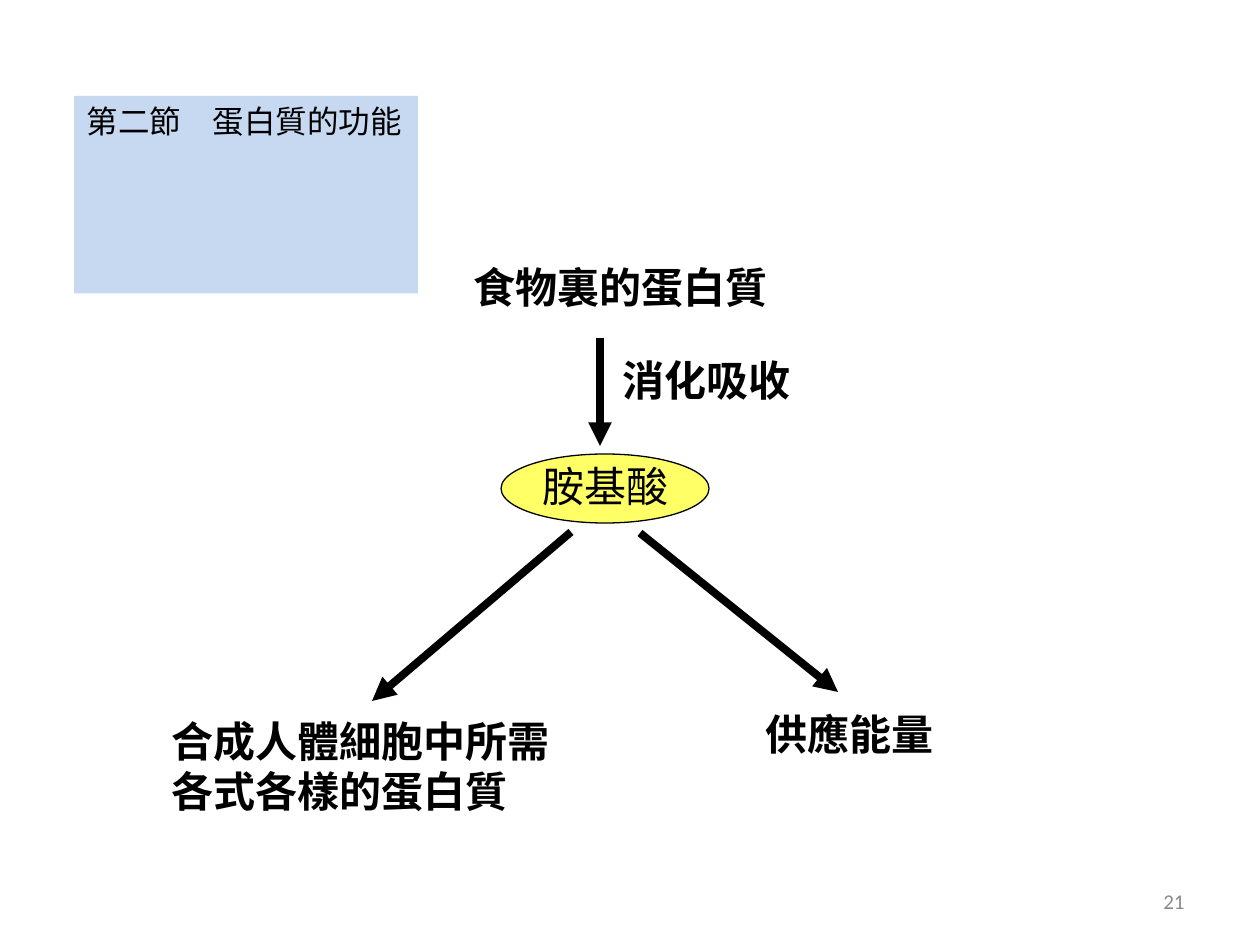
from lxml import etree
from pptx import Presentation
from pptx import util as u
from pptx.dml.color import RGBColor
from pptx.enum import shapes, text
from pptx.oxml import ns

BLACK = RGBColor(0x00, 0x00, 0x00)
GREY = RGBColor(0x89, 0x89, 0x89)
YELLOW = RGBColor(0xFF, 0xFF, 0x66)
PALE_BLUE = RGBColor(0xC6, 0xD9, 0xF1)

PX_PER_INCH = 126
TITLE_ONLY = 5


def px(*lengths):
    return [u.Emu(round(n * u.Inches(1) / PX_PER_INCH)) for n in lengths]


class Diagram:
    """The current slide and the style shared by its elements."""
    body_font = "Times New Roman"
    title_font = "Noto Sans CJK SC"
    number_font = "Calibri"
    body_size = 24

    def __init__(self, slide):
        self.slide = slide

    def set_words(self, frame, words, font, size, color=BLACK, bold=False,
                  align=text.PP_ALIGN.LEFT, anchor=text.MSO_ANCHOR.MIDDLE,
                  wrap=False, grow=True):
        frame.word_wrap = wrap
        frame.auto_size = (text.MSO_AUTO_SIZE.SHAPE_TO_FIT_TEXT if grow
                           else text.MSO_AUTO_SIZE.NONE)
        frame.vertical_anchor = anchor
        paragraph = frame.paragraphs[0]
        paragraph.alignment = align
        run = paragraph.add_run()
        run.text = words
        run.font.name = font
        run.font.size = u.Pt(size)
        run.font.bold = bold
        run.font.color.rgb = color

    def title(self, words, box):
        heading = self.slide.shapes.title
        heading.left, heading.top, heading.width, heading.height = px(*box)
        heading.fill.solid()
        heading.fill.fore_color.rgb = PALE_BLUE
        self.set_words(heading.text_frame, words, self.title_font, 18,
                       anchor=text.MSO_ANCHOR.TOP)

    def label(self, words, box, bold=True, wrap=False):
        frame = self.slide.shapes.add_textbox(*px(*box)).text_frame
        self.set_words(frame, words, self.body_font, self.body_size,
                       bold=bold, wrap=wrap)

    def page_number(self, words, box):
        frame = self.slide.shapes.add_textbox(*px(*box)).text_frame
        self.set_words(frame, words, self.number_font, 12, color=GREY,
                       align=text.PP_ALIGN.RIGHT, wrap=True, grow=False)

    def ellipse(self, box):
        oval = self.slide.shapes.add_shape(
            shapes.MSO_SHAPE.OVAL, *px(*box))
        oval.shadow.inherit = False
        oval.fill.solid()
        oval.fill.fore_color.rgb = YELLOW
        oval.line.color.rgb = BLACK
        oval.line.width = u.Pt(0.75)

    def arrow(self, start, end):
        connector = self.slide.shapes.add_connector(
            shapes.MSO_CONNECTOR.STRAIGHT, *px(*start, *end))
        connector.line.color.rgb = BLACK
        connector.line.width = u.Pt(4.5)
        properties = connector._element.spPr
        etree.SubElement(properties.find(ns.qn("a:ln")),
                         ns.qn("a:tailEnd"), type="triangle")
        etree.SubElement(properties, ns.qn("a:effectLst"))


def main():
    deck = Presentation()
    deck.slide_width, deck.slide_height = u.Inches(10), u.Inches(7.5)
    slide = deck.slides.add_slide(deck.slide_layouts[TITLE_ONLY])
    diagram = Diagram(slide)

    diagram.title("第二節　蛋白質的功能", (74, 96, 344, 50))

    diagram.label("食物裏的蛋白質", (461, 255, 330, 63))
    diagram.arrow((600, 338), (600, 446))
    diagram.label("消化吸收", (610, 348, 204, 63))

    diagram.ellipse((501, 454, 208, 69))
    diagram.label("胺基酸", (530, 454, 161, 63), bold=False)

    diagram.arrow((571, 532), (372, 701))
    diagram.label("合成人體細胞中所需各式各樣的蛋白質",
                  (159, 708, 426, 115), wrap=True)
    diagram.arrow((640, 533), (838, 692))
    diagram.label("供應能量", (753, 702, 204, 63))

    diagram.page_number("21", (903, 876, 294, 50))
    deck.save("out.pptx")


if __name__ == "__main__":
    main()
